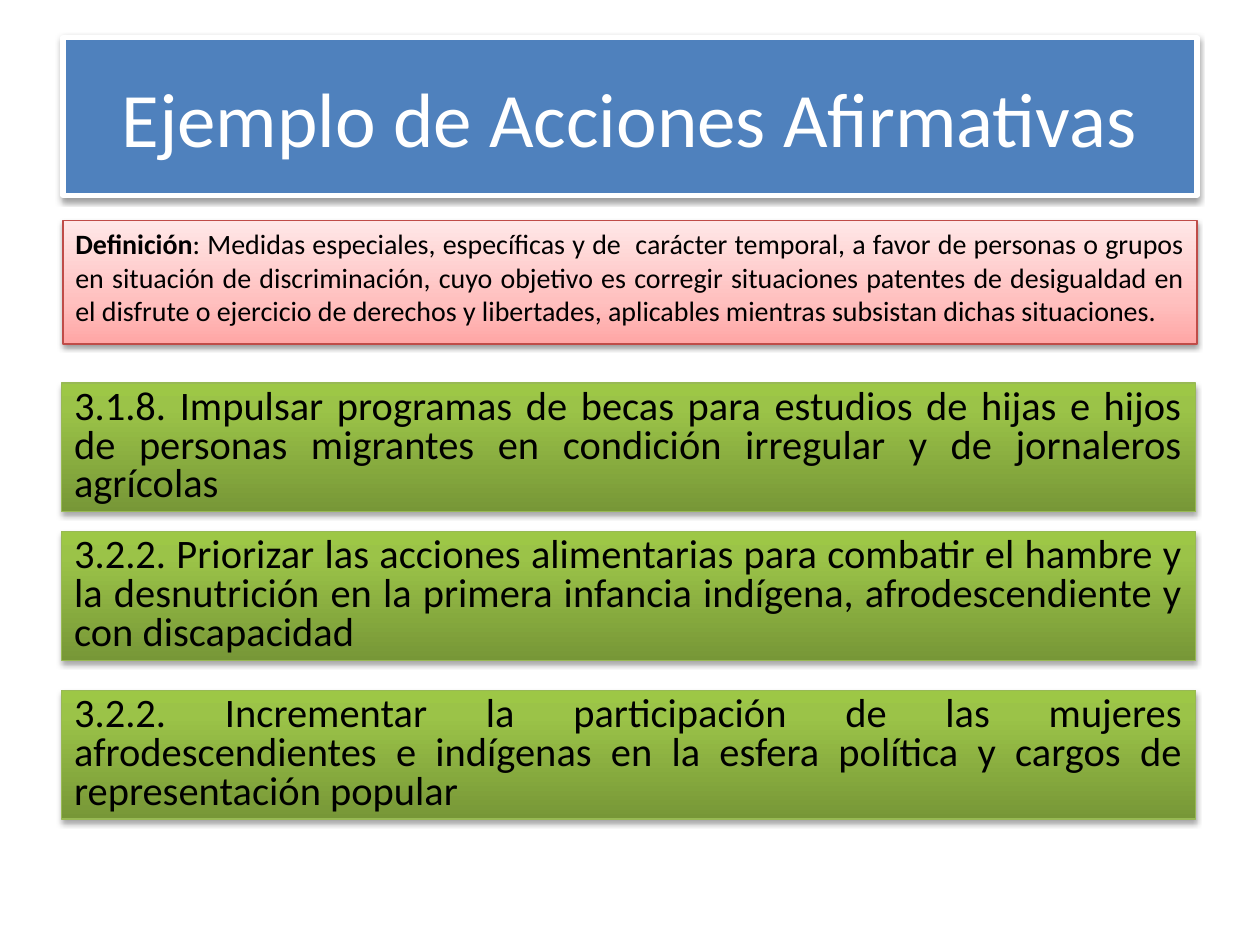
from lxml import etree
from pptx import Presentation
from pptx.dml.color import RGBColor
from pptx.enum.shapes import MSO_SHAPE
from pptx.enum.text import MSO_ANCHOR, PP_ALIGN
from pptx.oxml.ns import qn
from pptx.util import Pt

RECTANGLE = MSO_SHAPE.RECTANGLE
TOP, MIDDLE = MSO_ANCHOR.TOP, MSO_ANCHOR.MIDDLE
CENTER, JUSTIFY = PP_ALIGN.CENTER, PP_ALIGN.JUSTIFY

WHITE = RGBColor(0xFF, 0xFF, 0xFF)
BLACK = RGBColor(0x00, 0x00, 0x00)
BLUE = RGBColor(0x4F, 0x81, 0xBD)
RED_LINE = RGBColor(0xBF, 0x4C, 0x48)
GREEN_LINE = RGBColor(0x98, 0xB9, 0x55)
RED_STOPS = (
    (0, RGBColor(0xFF, 0xA6, 0xA5)),
    (35, RGBColor(0xFF, 0xC0, 0xBF)),
    (100, RGBColor(0xFF, 0xE7, 0xE7)),
)
GREEN_STOPS = (
    (0, RGBColor(0x77, 0x97, 0x37)),
    (80, RGBColor(0x9B, 0xC3, 0x48)),
    (100, RGBColor(0x9D, 0xC7, 0x46)),
)

FONT = "Calibri"
BOX_WIDTH = 648
ACTION_LEFT, ACTION_HEIGHT = 35.28, 73.44
ACTIONS = (
    (218.88, "3.1.8. Impulsar programas de becas para estudios de hijas e hijos "
             "de personas migrantes en condición irregular y de jornaleros agrícolas"),
    (303.84, "3.2.2. Priorizar las acciones alimentarias para combatir el hambre y "
             "la desnutrición en la primera infancia indígena, afrodescendiente y "
             "con discapacidad"),
    (394.56, "3.2.2. Incrementar la participación de las mujeres afrodescendientes "
             "e indígenas en la esfera política y cargos de representación popular"),
)
DEFINITION = (
    ": Medidas especiales, específicas y de  carácter temporal, a favor de personas "
    "o grupos en situación de discriminación, cuyo objetivo es corregir situaciones "
    "patentes de desigualdad en el disfrute o ejercicio de derechos y libertades, "
    "aplicables mientras subsistan dichas situaciones."
)


def add_color(parent, color):
    """Append an RGB colour element and return it."""
    return etree.SubElement(parent, qn("a:srgbClr"), val=str(color))


def fill_gradient(box, stops):
    """Fill a box with a gradient that runs from bottom to top."""
    box.fill.gradient()
    box.fill.gradient_angle = 90
    stop_list = next(box._element.spPr.iter(qn("a:gsLst")))
    for default_stop in list(stop_list):
        stop_list.remove(default_stop)
    for percent, color in stops:
        stop = etree.SubElement(stop_list, qn("a:gs"), pos=str(percent * 1000))
        add_color(stop, color)


def add_shadow(box, opacity, distance):
    """Give a box a soft black shadow that falls straight down."""
    box.shadow.inherit = False
    effects = box._element.spPr.find(qn("a:effectLst"))
    shadow = etree.SubElement(
        effects, qn("a:outerShdw"), blurRad=str(Pt(3.1)), dist=str(Pt(distance)),
        dir="5400000", rotWithShape="0")
    etree.SubElement(add_color(shadow, BLACK), qn("a:alpha"), val=str(opacity * 1000))


def add_box(slide, left, top, height, line_color, line_width, opacity, distance):
    """Add an outlined rectangle with a shadow."""
    box = slide.shapes.add_shape(
        RECTANGLE, Pt(left), Pt(top), Pt(BOX_WIDTH), Pt(height))
    box.line.color.rgb = line_color
    box.line.width = Pt(line_width)
    add_shadow(box, opacity, distance)
    return box


def write_text(box, runs, size, color, align, anchor):
    """Write (text, bold) runs as the box's paragraph and return it."""
    frame = box.text_frame
    frame.word_wrap = True
    frame.vertical_anchor = anchor
    paragraph = frame.paragraphs[0]
    paragraph.alignment = align
    for text, bold in runs:
        run = paragraph.add_run()
        run.text = text
        run.font.name = FONT
        run.font.size = Pt(size)
        run.font.bold = bold
        run.font.color.rgb = color
    return paragraph


def add_title(slide):
    """Add the blue title banner."""
    banner = add_box(slide, 36, 21.6, 90, WHITE, 3, 38, 1.6)
    banner.fill.solid()
    banner.fill.fore_color.rgb = BLUE
    write_text(banner, [("Ejemplo de Acciones Afirmativas", False)],
               44, WHITE, CENTER, MIDDLE)


def add_definition(slide):
    """Add the red definition box."""
    definition = add_box(slide, 36, 126, 70.56, RED_LINE, 0.75, 38, 1.6)
    fill_gradient(definition, RED_STOPS)
    paragraph = write_text(definition, [("Definición", True), (DEFINITION, False)],
                           16, BLACK, JUSTIFY, TOP)
    paragraph.space_before = Pt(3.2)


def add_action(slide, top, text):
    """Add one green box with an affirmative action."""
    action = add_box(slide, ACTION_LEFT, top, ACTION_HEIGHT, GREEN_LINE, 0.75, 35, 1.8)
    fill_gradient(action, GREEN_STOPS)
    paragraph = write_text(action, [(text, False)], 23.1, BLACK, JUSTIFY, TOP)
    paragraph.line_spacing = 0.8
    paragraph.space_before = Pt(4.6)


def main():
    """Build the slide and save it."""
    presentation = Presentation()
    presentation.slide_width = Pt(720)
    presentation.slide_height = Pt(540)
    slide = presentation.slides.add_slide(presentation.slide_layouts[6])
    add_title(slide)
    add_definition(slide)
    for top, text in ACTIONS:
        add_action(slide, top, text)
    presentation.save("out.pptx")


if __name__ == "__main__":
    main()
